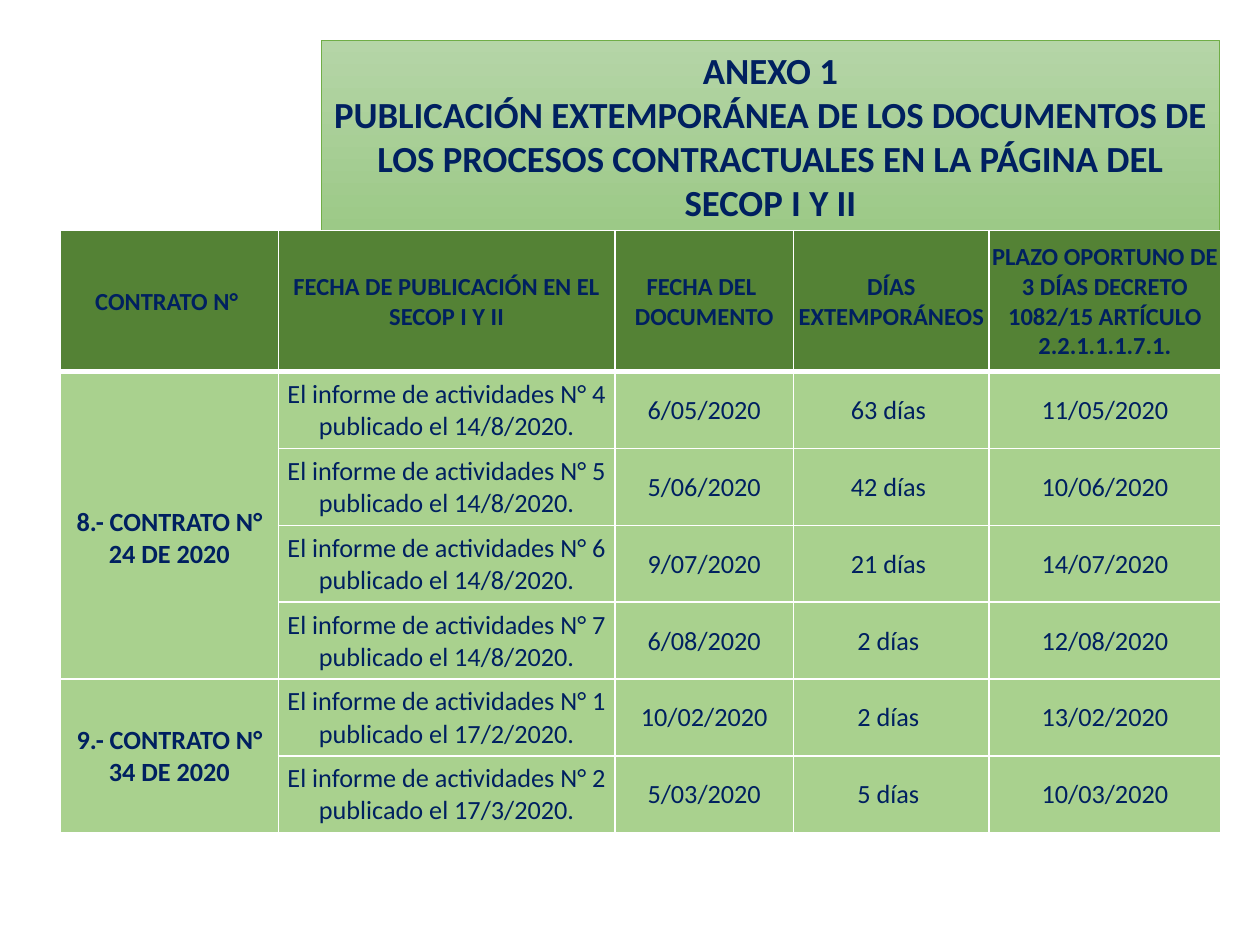
from dataclasses import dataclass

from lxml.etree import SubElement
from pptx import Presentation
from pptx.dml.color import RGBColor
from pptx.enum.shapes import MSO_SHAPE
from pptx.enum.text import MSO_ANCHOR, MSO_AUTO_SIZE, PP_ALIGN
from pptx.oxml.ns import qn
from pptx.slide import Slide
from pptx.table import Table, _Cell
from pptx.text.text import TextFrame
from pptx.util import Inches, Pt


@dataclass(frozen=True)
class Theme:
    font: str = "Calibri"
    text: str = "002060"
    header: str = "548235"
    body: str = "A9D18E"
    border: str = "FFFFFF"
    banner_top: str = "B5D5A7"
    banner_bottom: str = "9CC987"
    banner_line: str = "70AD47"
    title_size: float = 21
    header_size: float = 14
    body_size: float = 15


@dataclass(frozen=True)
class Report:
    number: int
    published: str
    document_date: str
    days_late: int
    deadline: str


@dataclass(frozen=True)
class Contract:
    label: str
    reports: tuple[Report, ...]


THEME = Theme()
TITLE = (
    "ANEXO 1\n"
    "PUBLICACIÓN EXTEMPORÁNEA DE LOS DOCUMENTOS DE LOS PROCESOS "
    "CONTRACTUALES EN LA PÁGINA DEL SECOP I Y II"
)
HEADERS = (
    "CONTRATO N° ",
    "FECHA DE PUBLICACIÓN EN EL SECOP I Y II",
    "FECHA DEL \nDOCUMENTO",
    "DÍAS EXTEMPORÁNEOS",
    "PLAZO OPORTUNO DE 3 DÍAS DECRETO 1082/15 ARTÍCULO 2.2.1.1.1.7.1.",
)
CONTRACTS = (
    Contract("8.- CONTRATO N° 24 DE 2020", (
        Report(4, "14/8/2020", "6/05/2020", 63, "11/05/2020"),
        Report(5, "14/8/2020", "5/06/2020", 42, "10/06/2020"),
        Report(6, "14/8/2020", "9/07/2020", 21, "14/07/2020"),
        Report(7, "14/8/2020", "6/08/2020", 2, "12/08/2020"),
    )),
    Contract("9.- CONTRATO N° 34 DE 2020", (
        Report(1, "17/2/2020", "10/02/2020", 2, "13/02/2020"),
        Report(2, "17/3/2020", "5/03/2020", 5, "10/03/2020"),
    )),
)
COLUMN_WIDTHS = (1.73, 2.67, 1.42, 1.55, 1.84)
HEADER_HEIGHT, ROW_HEIGHT = 1.12, 0.61


def write_text(frame: TextFrame, text: str, *, size: float, bold: bool = False) -> None:
    """Write centred text; \\n starts a paragraph and \\v breaks a line."""
    frame.text = text
    for paragraph in frame.paragraphs:
        paragraph.alignment = PP_ALIGN.CENTER
        for run in paragraph.runs:
            run.font.name = THEME.font
            run.font.size = Pt(size)
            run.font.bold = bold
            run.font.color.rgb = RGBColor.from_string(THEME.text)
        for line_break in paragraph._p.findall(qn("a:br")):
            SubElement(line_break, qn("a:rPr"), sz=str(int(size * 100)))


def set_borders(cell: _Cell, *, top: float = 1, bottom: float = 1) -> None:
    properties = cell._tc.get_or_add_tcPr()
    for side, width in (("L", 1), ("R", 1), ("T", top), ("B", bottom)):
        line = SubElement(properties, qn(f"a:ln{side}"), w=str(Pt(width)))
        fill = SubElement(line, qn("a:solidFill"))
        SubElement(fill, qn("a:srgbClr"), val=THEME.border)


def style_cell(cell: _Cell, row: int) -> None:
    set_borders(cell, top=3 if row == 1 else 1, bottom=3 if row == 0 else 1)
    cell.fill.solid()
    cell.fill.fore_color.rgb = RGBColor.from_string(THEME.body if row else THEME.header)
    cell.vertical_anchor = MSO_ANCHOR.MIDDLE
    cell.margin_left = cell.margin_right = cell.margin_top = Inches(0.01)
    cell.margin_bottom = Inches(0)


def add_banner(slide: Slide) -> None:
    banner = slide.shapes.add_shape(
        MSO_SHAPE.RECTANGLE, Inches(2.55), Inches(0.32), Inches(7.13), Inches(1.51)
    )
    banner.shadow.inherit = False
    banner.fill.gradient()
    banner.fill.gradient_angle = 270
    colors = (THEME.banner_top, THEME.banner_bottom)
    for stop, position, color in zip(banner.fill.gradient_stops, (0, 1), colors):
        stop.position = position
        stop.color.rgb = RGBColor.from_string(color)
    banner.line.color.rgb = RGBColor.from_string(THEME.banner_line)
    banner.line.width = Pt(0.5)
    banner.text_frame.word_wrap = True
    banner.text_frame.auto_size = MSO_AUTO_SIZE.SHAPE_TO_FIT_TEXT
    write_text(banner.text_frame, TITLE, size=THEME.title_size, bold=True)


def fill_contract(table: Table, first_row: int, contract: Contract) -> None:
    """Write one contract: a merged label cell and a row for each report."""
    label_cell = table.cell(first_row, 0)
    label_cell.merge(table.cell(first_row + len(contract.reports) - 1, 0))
    write_text(label_cell.text_frame, contract.label, size=THEME.body_size, bold=True)
    for row, report in enumerate(contract.reports, first_row):
        values = (
            f"El informe de actividades N° {report.number}\vpublicado el {report.published}.",
            report.document_date,
            f"{report.days_late} días ",
            report.deadline,
        )
        for column, value in enumerate(values, 1):
            write_text(table.cell(row, column).text_frame, value, size=THEME.body_size)


def add_contract_table(slide: Slide) -> None:
    report_count = sum(len(contract.reports) for contract in CONTRACTS)
    heights = (HEADER_HEIGHT,) + (ROW_HEIGHT,) * report_count
    table = slide.shapes.add_table(
        len(heights), len(HEADERS), Inches(0.48), Inches(1.83),
        Inches(sum(COLUMN_WIDTHS)), Inches(sum(heights)),
    ).table
    table.first_row = table.horz_banding = False
    for column, width in zip(table.columns, COLUMN_WIDTHS):
        column.width = Inches(width)
    for index, (row, height) in enumerate(zip(table.rows, heights)):
        row.height = Inches(height)
        for cell in row.cells:
            style_cell(cell, index)

    for column, header in enumerate(HEADERS):
        write_text(table.cell(0, column).text_frame, header, size=THEME.header_size, bold=True)
    first_row = 1
    for contract in CONTRACTS:
        fill_contract(table, first_row, contract)
        first_row += len(contract.reports)

    # The first contract label sits slightly below the middle of its cell.
    first_label = table.cell(1, 0)
    first_label.margin_left = first_label.margin_right = Inches(0.1)
    first_label.margin_top = Inches(0.21)


def main() -> None:
    presentation = Presentation()
    presentation.slide_width = Inches(10)
    presentation.slide_height = Inches(7.5)
    slide = presentation.slides.add_slide(presentation.slide_layouts[6])
    add_banner(slide)
    add_contract_table(slide)
    presentation.save("out.pptx")


if __name__ == "__main__":
    main()
